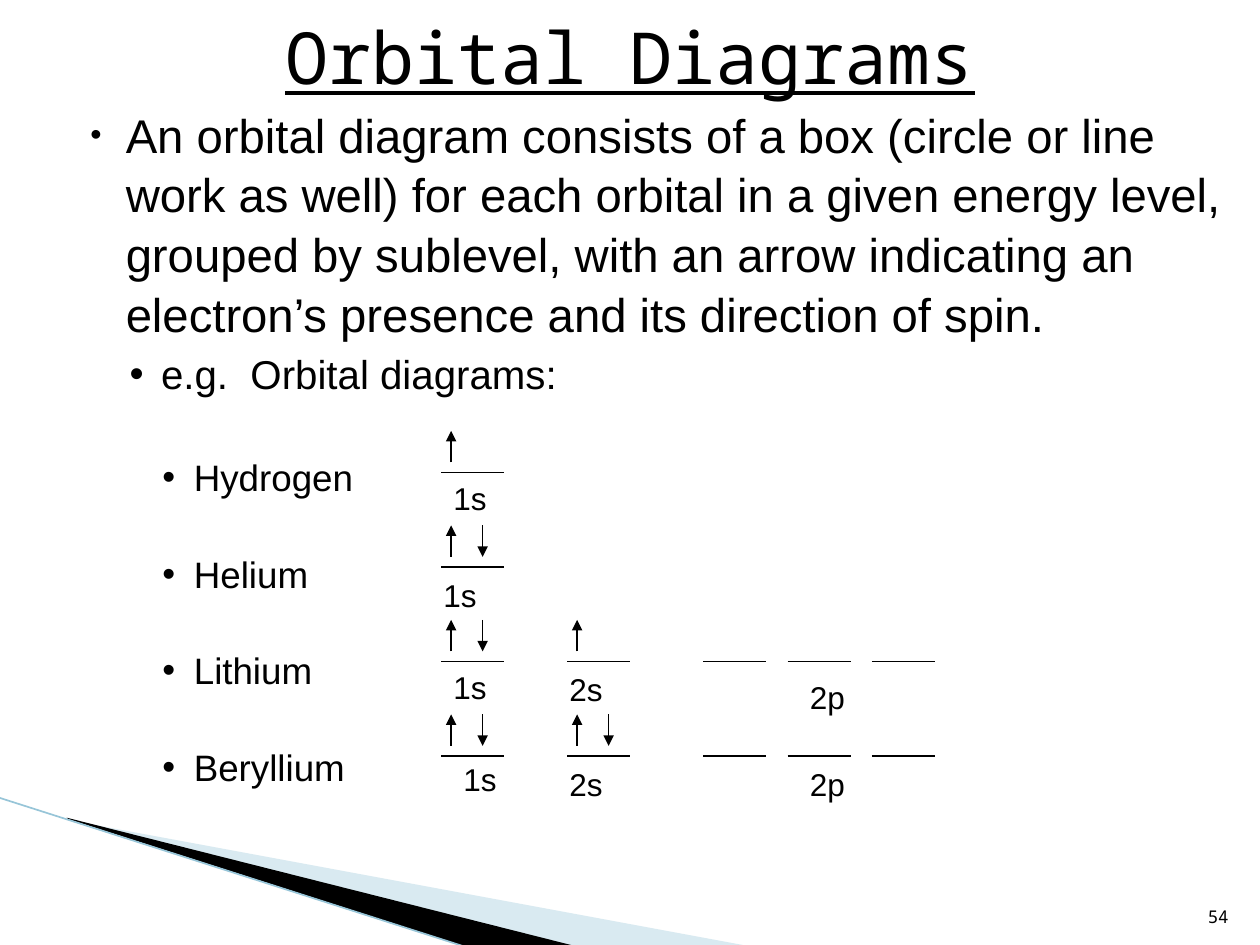
from dataclasses import dataclass

from lxml.etree import SubElement
from pptx import Presentation
from pptx.dml.color import RGBColor
from pptx.enum.shapes import MSO_CONNECTOR
from pptx.enum.text import MSO_ANCHOR, MSO_AUTO_SIZE, PP_ALIGN
from pptx.oxml.ns import qn
from pptx.util import Inches, Pt


@dataclass(frozen=True)
class Theme:
    ink: RGBColor = RGBColor(0x00, 0x00, 0x00)
    pale: RGBColor = RGBColor(0xA0, 0xCB, 0xDC)
    edge: RGBColor = RGBColor(0x97, 0xC5, 0xD8)
    body_font: str = "Arial"
    head_font: str = "Noto Sans Mono"
    title: int = 41
    levels: tuple = (27, 23, 21)
    label: int = 18
    number: int = 10


theme = Theme()


def add_line(x1, y1, x2, y2, color=theme.ink, width=0.75, arrow=False):
    c = s.shapes.add_connector(MSO_CONNECTOR.STRAIGHT, Inches(x1), Inches(y1),
                               Inches(x2), Inches(y2))
    c.line.color.rgb = color
    c.line.width = Pt(width)
    if arrow:
        SubElement(c.line._get_or_add_ln(), qn("a:tailEnd"), type="triangle")
    SubElement(c.element.spPr, qn("a:effectLst"))


def add_run(p, text, size, font=theme.body_font):
    r = p.add_run()
    r.text = text
    r.font.size = Pt(size)
    r.font.name = font
    r.font.color.rgb = theme.ink
    return r


prs = Presentation()
prs.slide_width, prs.slide_height = Inches(10), Inches(7.5)
s = prs.slides.add_slide(prs.slide_layouts[5])

# Corner decoration: outline, fill, opacity in percent
wedges = [
    ([(0.55, 6.51), (5.95, 7.51), (4.56, 7.51), (0.55, 6.5)], theme.pale, 40),
    ([(0.53, 6.49), (4.57, 7.51), (3.72, 7.52), (0.54, 6.5)], theme.ink, 100),
]
for outline, color, opacity in wedges:
    points = [(Inches(x), Inches(y)) for x, y in outline]
    builder = s.shapes.build_freeform(*points[0], scale=1.0)
    builder.add_line_segments(points[1:], close=True)
    wedge = builder.convert_to_shape()
    wedge.shadow.inherit = False
    wedge.fill.solid()
    wedge.fill.fore_color.rgb = color
    wedge.line.fill.background()
    if opacity < 100:
        fill_color = wedge.element.spPr.find(qn("a:solidFill")).find(qn("a:srgbClr"))
        SubElement(fill_color, qn("a:alpha"), val=str(opacity * 1000))
add_line(-0.01, 6.33, 3.71, 7.52, theme.edge, 0.95)

# Title
title = s.shapes.title
title.left, title.top = Inches(0.5), Inches(0)
title.width, title.height = Inches(9), Inches(0.88)
tf = title.text_frame
tf.auto_size = MSO_AUTO_SIZE.NONE
tf.vertical_anchor = MSO_ANCHOR.MIDDLE
p = tf.paragraphs[0]
p.alignment = PP_ALIGN.CENTER
add_run(p, "Orbital Diagrams", theme.title, theme.head_font).font.underline = True

# Bulleted text: level, space before in points, text
bullets = [
    (0, 0, "An orbital diagram consists of a box (circle or line work as well) "
           "for each orbital in a given energy level, grouped by sublevel, with "
           "an arrow indicating an electron’s presence and its direction of spin."),
    (1, 3.2, "e.g.  Orbital diagrams:"),
    (2, 31.5, "Hydrogen"),
    (2, 28.7, "Helium"),
    (2, 28.7, "Lithium"),
    (2, 28.7, "Beryllium"),
]
indents = [(0.4, -0.28), (0.68, -0.25), (0.94, -0.25)]
tf = s.shapes.add_textbox(Inches(0.5), Inches(0.77), Inches(9.36), Inches(6.17)).text_frame
tf.word_wrap = True
for i, (level, before, text) in enumerate(bullets):
    p = tf.add_paragraph() if i else tf.paragraphs[0]
    p.level = level
    p.line_spacing = 1.05
    p.space_before = Pt(before)
    pPr = p._p.get_or_add_pPr()
    margin, hang = indents[level]
    pPr.set("marL", str(Inches(margin)))
    pPr.set("indent", str(Inches(hang)))
    if level == 0:
        SubElement(pPr, qn("a:buSzPct"), val="68000")
    SubElement(pPr, qn("a:buFont"), typeface=theme.body_font)
    SubElement(pPr, qn("a:buChar"), char="•")
    add_run(p, text, theme.levels[level])

# Orbital diagrams: one row per element, each orbital as
# (name, electrons, label left, label top)
orbital_x = {"1s": [3.5], "2s": [4.5], "2p": [5.58, 6.25, 6.92]}
rows = [
    [("1s", 1, 3.5, 3.75)],
    [("1s", 2, 3.42, 4.52)],
    [("1s", 2, 3.5, 5.25), ("2s", 1, 4.42, 5.27), ("2p", 0, 6.33, 5.33)],
    [("1s", 2, 3.58, 5.98), ("2s", 2, 4.42, 6.02), ("2p", 0, 6.33, 6.02)],
]
for i, orbitals in enumerate(rows):
    y = 3.75 + 0.75 * i
    low, high = y - 0.08, y - 0.33
    for name, electrons, label_x, label_y in orbitals:
        for x in orbital_x[name]:
            add_line(x, y, x + 0.5, y)
        x = orbital_x[name][0]
        if electrons >= 1:
            add_line(x + 0.08, low, x + 0.08, high, arrow=True)
        if electrons == 2:
            add_line(x + 0.33, high, x + 0.33, low, arrow=True)
        tf = s.shapes.add_textbox(Inches(label_x), Inches(label_y),
                                  Inches(0.5), Inches(0.4)).text_frame
        tf.word_wrap = True
        tf.auto_size = MSO_AUTO_SIZE.SHAPE_TO_FIT_TEXT
        add_run(tf.paragraphs[0], name, theme.label)

# Slide number
tf = s.shapes.add_textbox(Inches(9.33), Inches(7.01), Inches(0.52), Inches(0.4)).text_frame
tf.word_wrap = True
tf.vertical_anchor = MSO_ANCHOR.BOTTOM
p = tf.paragraphs[0]
p.alignment = PP_ALIGN.RIGHT
add_run(p, "54", theme.number, theme.head_font)

prs.save("out.pptx")
